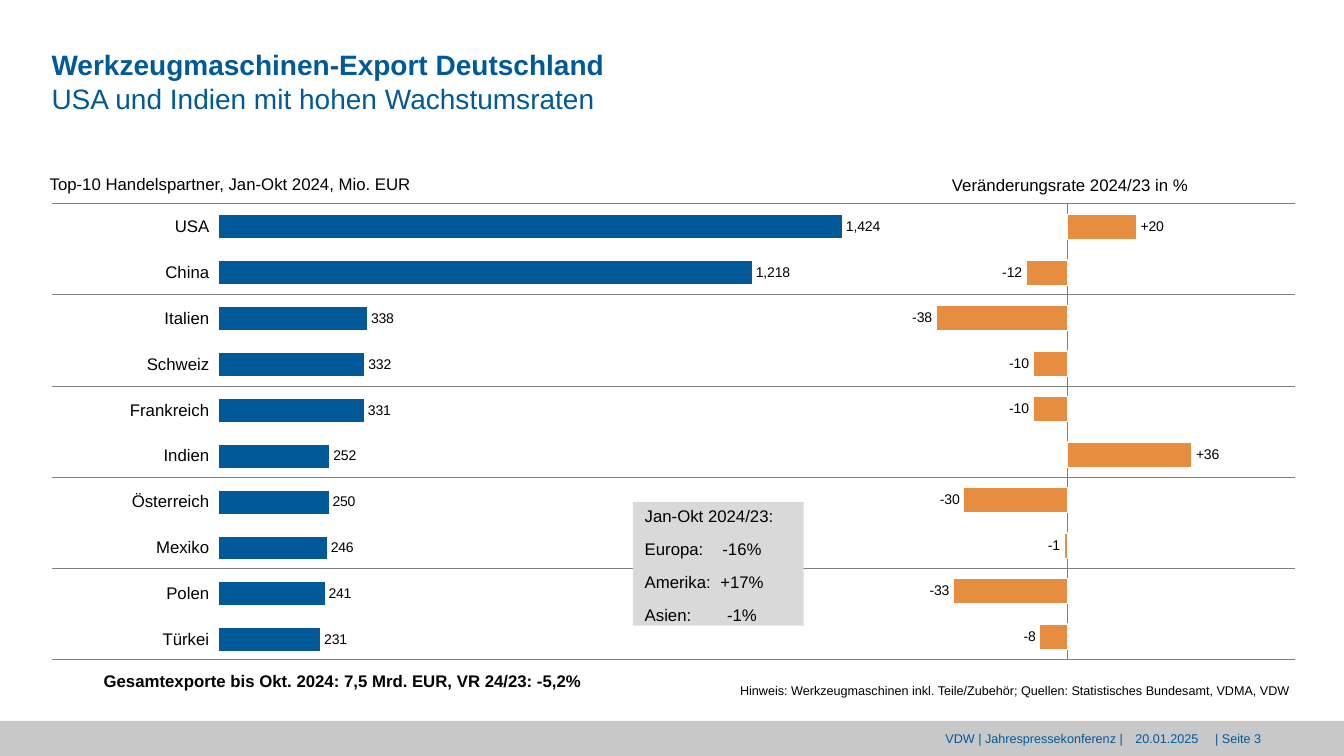
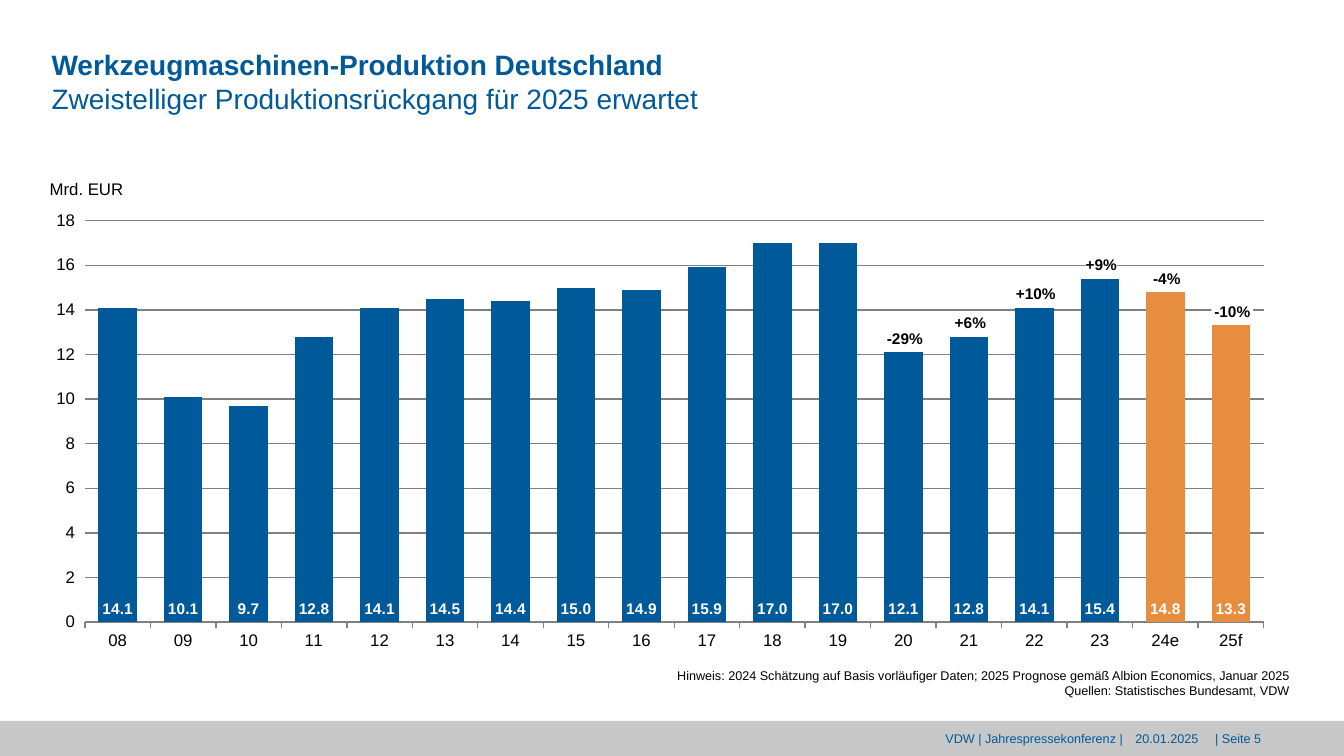
from lxml.etree import SubElement
from pptx import Presentation
from pptx.chart.data import CategoryChartData
from pptx.dml.color import RGBColor
from pptx.enum.chart import XL_CHART_TYPE, XL_LABEL_POSITION, XL_TICK_LABEL_POSITION, XL_TICK_MARK
from pptx.enum.shapes import MSO_CONNECTOR, MSO_SHAPE
from pptx.enum.text import MSO_ANCHOR, MSO_AUTO_SIZE, PP_ALIGN
from pptx.oxml import parse_xml
from pptx.oxml.ns import nsdecls, qn
from pptx.util import Pt

FONT = "Arial"
BLUE, ORANGE, BLACK, WHITE = "005A99", "E68D3F", "000000", "FFFFFF"
GRAY, BAND, PANEL = "808080", "C8C8C8", "D9D9D9"
WIDE, HIGH = 960, 540


def rgb(code):
    return RGBColor.from_string(code)


def pts(*nums):
    return [Pt(n) for n in nums]


def style(font, size, color=BLACK, bold=False):
    font.name, font.size, font.bold = FONT, Pt(size), bold
    font.color.rgb = rgb(color)


def rect(slide, box, color):
    shape = slide.shapes.add_shape(MSO_SHAPE.RECTANGLE, *pts(*box))
    shape.shadow.inherit = False
    shape.fill.solid()
    shape.fill.fore_color.rgb = rgb(color)
    shape.line.fill.background()
    return shape


def text(slide, box, words, size=12, color=BLACK, bold=False,
         align=PP_ALIGN.LEFT, anchor=MSO_ANCHOR.TOP, fill=None, wrap=True):
    shape = slide.shapes.add_textbox(*pts(*box))
    if fill:
        shape.fill.solid()
        shape.fill.fore_color.rgb = rgb(fill)
    frame = shape.text_frame
    frame.margin_left = frame.margin_right = 0
    frame.margin_top = frame.margin_bottom = 0
    frame.word_wrap = wrap
    frame.vertical_anchor = anchor
    frame.text = words
    for para in frame.paragraphs:
        para.alignment = align
        for run in para.runs:
            style(run.font, size, color, bold)
    return shape


# Title, gray band and footer shared by all slides
def base(deck, head, sub, page):
    slide = deck.slides.add_slide(deck.slide_layouts[5])
    title = slide.shapes.title
    title.left, title.top, title.width, title.height = pts(36.8, 34, 740, 53)
    frame = title.text_frame
    frame.margin_left = frame.margin_right = 0
    frame.margin_top = frame.margin_bottom = 0
    frame.auto_size = MSO_AUTO_SIZE.NONE
    frame.vertical_anchor = MSO_ANCHOR.TOP
    frame.text = f"{head}\v{sub}"
    para = frame.paragraphs[0]
    para.alignment = PP_ALIGN.LEFT
    for run, bold in zip(para.runs, (True, False)):
        style(run.font, 20, BLUE, bold)
    footer(slide, (0, 515, WIDE, HIGH - 515), page)
    return slide


def footer(slide, box, page):
    rect(slide, box, BAND)
    x, y = box[0], box[1] + 7
    text(slide, (x + 482, y, 320, 18), "VDW | Jahrespressekonferenz |", 9, BLUE,
         align=PP_ALIGN.RIGHT)
    text(slide, (x + 808, y, 51, 18), "20.01.2025", 9, BLUE, align=PP_ALIGN.CENTER)
    text(slide, (x + 868, y, 54, 18), f"| Seite {page}", 9, BLUE)


def note(slide, words):
    text(slide, (113, 474.5, 808, 24), words, 9, align=PP_ALIGN.RIGHT,
         anchor=MSO_ANCHOR.BOTTOM)


# Single-series bar chart; plot holds x, y, w, h as shares of the box
def bars(slide, kind, box, plot, name, cats, vals, color, gap, form, scale):
    data = CategoryChartData()
    data.categories = cats
    data.add_series(name, vals)
    chart = slide.shapes.add_chart(kind, *pts(*box), data).chart
    chart.has_legend = chart.has_title = False
    style(chart.font, 12)

    area = chart.element.find(f".//{qn('c:plotArea')}")
    for old in area.findall(qn("c:layout")):
        area.remove(old)
    parts = "".join(f'<c:{tag} val="{num}"/>' for tag, num in zip("xywh", plot))
    area.insert(0, parse_xml(
        f'<c:layout {nsdecls("c")}><c:manualLayout><c:layoutTarget val="inner"/>'
        f'<c:xMode val="edge"/><c:yMode val="edge"/>{parts}'
        '</c:manualLayout></c:layout>'))

    group = chart.plots[0]
    group.gap_width = gap
    group.vary_by_categories = False
    row = group.series[0]
    row.invert_if_negative = False
    row.format.fill.solid()
    row.format.fill.fore_color.rgb = rgb(color)
    marks = row.data_labels
    marks.show_value = True
    marks.number_format, marks.number_format_is_linked = form, False
    marks.position = XL_LABEL_POSITION.OUTSIDE_END
    style(marks.font, 10)
    axis = chart.value_axis
    axis.minimum_scale, axis.maximum_scale = scale
    axis.has_major_gridlines = False
    return chart


def ranked(*args):
    chart = bars(*args)
    chart.value_axis.visible = False
    chart.category_axis.reverse_order = True
    return chart


def gray(line):
    line.color.rgb, line.width = rgb(GRAY), Pt(1)


# Left chart: export value by partner
def trade(slide, box):
    lands = ["USA", "China", "Italien", "Schweiz", "Frankreich", "Indien",
             "Österreich", "Mexiko", "Polen", "Türkei"]
    vals = [1424, 1218, 338, 332, 331, 252, 250, 246, 241, 231]
    chart = ranked(slide, XL_CHART_TYPE.BAR_CLUSTERED, box, (0.195, 0, 0.805, 1),
                   "Export", lands, vals, BLUE, 100, "#,##0", (0, 1600))
    chart.category_axis.format.line.fill.background()
    style(chart.category_axis.tick_labels.font, 12)


# Right chart: change in percent
def change(slide, box):
    vals = [20, -12, -38, -10, -10, 36, -30, -1, -33, -8]
    cats = [str(n + 1) for n in range(len(vals))]
    chart = ranked(slide, XL_CHART_TYPE.BAR_CLUSTERED, box, (0, 0, 1, 1),
                   "Veränderung", cats, vals, ORANGE, 80, r"\+0;\-0", (-55, 55))
    edge = chart.plots[0].series[0].format.line
    edge.color.rgb, edge.width = rgb(WHITE), Pt(1)
    axis = chart.category_axis
    axis.tick_label_position = XL_TICK_LABEL_POSITION.NONE
    axis.major_tick_mark = XL_TICK_MARK.NONE
    gray(axis.format.line)


def rules(slide, box, count):
    x, y, w, h = box
    for n in range(count):
        level = y + n * h / (count - 1)
        line = slide.shapes.add_connector(MSO_CONNECTOR.STRAIGHT, *pts(x, level, x + w, level))
        line.line.color.rgb, line.line.width = rgb(GRAY), Pt(0.5)
        SubElement(line.element.spPr, qn("a:effectLst"))


# Panel with the change by region
def panel(slide, box):
    shape = text(slide, box, "Jan-Okt 2024/23:\nEuropa:\t-16%\nAmerika:\t+17%\nAsien:\t-1%",
                 fill=PANEL)
    frame = shape.text_frame
    frame.margin_left, frame.margin_top = pts(8.5, 3)
    for para in frame.paragraphs:
        para.space_after = Pt(9)
    for para in frame.paragraphs[1:]:
        stops = SubElement(para._p.get_or_add_pPr(), qn("a:tabLst"))
        SubElement(stops, qn("a:tab"), pos=str(Pt(69.5)), algn="ctr")


def export(deck):
    slide = base(deck, "Werkzeugmaschinen-Export Deutschland",
                 "USA und Indien mit hohen Wachstumsraten", 3)
    trade(slide, (35.5, 145.5, 621, 328))
    change(slide, (626.5, 145.5, 272, 326))
    text(slide, (35.5, 124, 330, 15), "Top-10 Handelspartner, Jan-Okt 2024, Mio. EUR")
    text(slide, (680, 124.5, 180, 15), "Veränderungsrate 2024/23 in %")
    rules(slide, (37.5, 145.5, 887.5, 325.5), 6)
    note(slide, "Hinweis: Werkzeugmaschinen inkl. Teile/Zubehör; "
                "Quellen: Statistisches Bundesamt, VDMA, VDW")
    text(slide, (74, 479, 400, 15),
         "Gesamtexporte bis Okt. 2024: 7,5 Mrd. EUR, VR 24/23: -5,2%", bold=True)
    panel(slide, (452, 358.5, 122, 88.5))


# Columns by year with the yearly change above the latest ones
def years(slide, box):
    cats = [f"{n:02}" for n in range(8, 24)] + ["24e", "25f"]
    vals = [14.1, 10.1, 9.7, 12.8, 14.1, 14.5, 14.4, 15, 14.9,
            15.9, 17, 17, 12.1, 12.8, 14.1, 15.4, 14.8, 13.3]
    rates = ["-29%", "+6%", "+10%", "+9%", "-4%", "-10%"]
    plot, top = (0.029, 0.027, 0.97, 0.899), 18
    chart = bars(slide, XL_CHART_TYPE.COLUMN_CLUSTERED, box, plot, "Produktion",
                 cats, vals, BLUE, 70, "0.0", (0, top))
    row = chart.plots[0].series[0]
    row.data_labels.position = XL_LABEL_POSITION.INSIDE_BASE
    style(row.data_labels.font, 11, WHITE, True)
    for n in (16, 17):
        fill = row.points[n].format.fill
        fill.solid()
        fill.fore_color.rgb = rgb(ORANGE)
    axis = chart.value_axis
    axis.major_unit = 2
    axis.has_major_gridlines = True
    gray(axis.major_gridlines.format.line)
    axis.format.line.fill.background()
    axis.tick_labels.number_format = "0"
    axis.tick_labels.number_format_is_linked = False
    gray(chart.category_axis.format.line)
    for part in (axis, chart.category_axis):
        style(part.tick_labels.font, 12)

    x, y, w, h = box
    step = plot[2] * w / len(vals)
    first = len(vals) - len(rates)
    for n, rate in enumerate(rates, first):
        mid = x + plot[0] * w + (n + 0.5) * step + 1
        head = y + h * (plot[1] + plot[3] * (1 - vals[n] / top))
        wide = 7.5 * len(rate)
        text(slide, (mid - wide / 2, head - 16.5, wide, 14), rate, 11, bold=True,
             align=PP_ALIGN.CENTER, wrap=False,
             fill=WHITE if rate in ("+9%", "-10%") else None)


def output(deck):
    slide = base(deck, "Werkzeugmaschinen-Produktion Deutschland",
                 "Zweistelliger Produktionsrückgang für 2025 erwartet", 5)
    text(slide, (35.5, 127.5, 97, 15), "Mrd. EUR")
    note(slide, "Hinweis: 2024 Schätzung auf Basis vorläufiger Daten; "
                "2025 Prognose gemäß Albion Economics, Januar 2025\n"
                "Quellen: Statistisches Bundesamt, VDW")
    years(slide, (35.5, 149, 868, 319))


def main():
    deck = Presentation()
    deck.slide_width, deck.slide_height = pts(WIDE, HIGH)
    export(deck)
    output(deck)
    deck.save("out.pptx")


if __name__ == "__main__":
    main()
